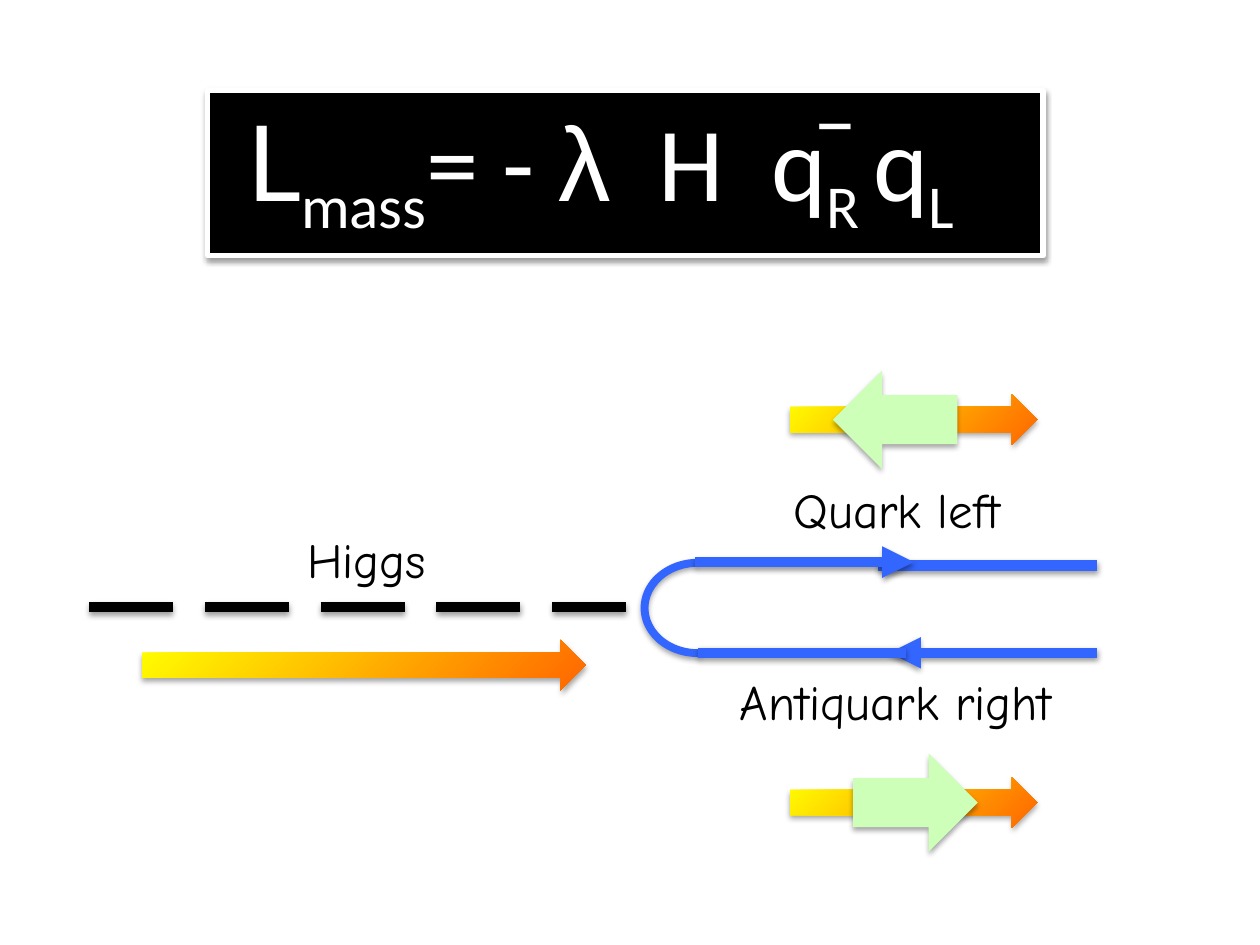
from typing import NamedTuple, Optional

from lxml import etree
from pptx import Presentation
from pptx.dml.color import RGBColor
from pptx.enum.dml import MSO_LINE
from pptx.enum.shapes import MSO_CONNECTOR, MSO_SHAPE
from pptx.enum.text import MSO_ANCHOR, MSO_AUTO_SIZE, PP_ALIGN
from pptx.oxml.ns import qn
from pptx.util import Cm, Pt

STRAIGHT = MSO_CONNECTOR.STRAIGHT
RECTANGLE = MSO_SHAPE.RECTANGLE
BLOCK_ARC = MSO_SHAPE.BLOCK_ARC
RIGHT_ARROW = MSO_SHAPE.RIGHT_ARROW
LONG_DASH = MSO_LINE.LONG_DASH
FIT_SHAPE = MSO_AUTO_SIZE.SHAPE_TO_FIT_TEXT
TOP = MSO_ANCHOR.TOP
LEFT = PP_ALIGN.LEFT

COLORS = {
    "black": "000000",
    "white": "FFFFFF",
    "quark": "3366FF",
    "orange": "FF6600",
    "yellow": "FFFF00",
    "spin": "CDFFB8",
}
LINE_SHADOW_DISTANCE = 20000
SHAPE_SHADOW_DISTANCE = 23000


class Box(NamedTuple):
    """A frame in centimetres."""
    left: float
    top: float
    width: float
    height: float


class Label(NamedTuple):
    text: str
    box: Box
    font: str = "Comic Neue"
    size: int = 28
    color: str = "black"


class Line(NamedTuple):
    """A horizontal line; its arrowhead sits at the start."""
    start: float
    end: float
    y: float
    color: str = "quark"
    dash: Optional[MSO_LINE] = None
    arrowhead: bool = False


class Term(NamedTuple):
    """A part of the formula."""
    text: str
    font: str = "Calibri"
    subscript: bool = False


FORMULA_BOX = Box(4.19, 1.83, 16.84, 3.33)
FORMULA = [
    Term(" L", "Lato"),
    Term("mass", subscript=True),
    Term("= - "),
    Term("λ", "Arial"),
    Term("  H  q"),
    Term("R ", subscript=True),
    Term("q"),
    Term("L", subscript=True),
]
ANTIQUARK_BAR = Label("−", Box(16.18, 1.27, 1.37, 2.31), "Calibri", 48, "white")

HIGGS_LINE = Line(1.8, 12.62, 12.24, "black", LONG_DASH)
TURN = Box(13.08, 11.1, 1.98, 2.31)
QUARK_LINES = [
    Line(17.93, 22.12, 13.16, arrowhead=True),
    Line(17.7, 22.12, 11.4),
    Line(14.07, 18.26, 13.16),
    Line(18.42, 14.02, 11.33, arrowhead=True),
]
LABELS = [
    Label("Quark left", Box(15.75, 9.55, 5.54, 1.45)),
    Label("Antiquark right", Box(14.66, 13.41, 7.72, 1.45)),
    Label("Higgs", Box(5.94, 10.54, 2.92, 1.3)),
]
MOMENTUM_ARROWS = [
    Box(15.93, 15.67, 4.98, 1.02),
    Box(2.87, 12.9, 8.94, 1.02),
    Box(15.93, 7.95, 4.98, 1.02),
]
SPIN_ARROWS = [(Box(17.2, 15.19, 2.51, 1.98), 0), (Box(16.79, 7.47, 2.51, 1.98), 180)]


def rgb(name: str) -> RGBColor:
    return RGBColor.from_string(COLORS[name])


def add_shadow(shape, distance: int, opacity: int) -> None:
    """Give a shape or connector a soft shadow straight below it."""
    effects = etree.SubElement(shape._element.spPr, qn("a:effectLst"))
    shadow = etree.SubElement(effects, qn("a:outerShdw"), blurRad="40000",
                              dist=str(distance), dir="5400000", rotWithShape="0")
    color = etree.SubElement(shadow, qn("a:srgbClr"), val=COLORS["black"])
    etree.SubElement(color, qn("a:alpha"), val=str(opacity * 1000))


def add_shape(shapes, kind: MSO_SHAPE, box: Box, color: Optional[str] = None,
              rotation: float = 0):
    """Add a shadowed, unoutlined shape; without a colour it gets the gradient."""
    shape = shapes.add_shape(kind, *map(Cm, box))
    shape.rotation = rotation
    shape.line.fill.background()
    if color:
        shape.fill.solid()
        shape.fill.fore_color.rgb = rgb(color)
    else:
        fill_with_gradient(shape)
    add_shadow(shape, SHAPE_SHADOW_DISTANCE, 35)
    return shape


def fill_with_gradient(shape) -> None:
    """Spread orange from the bottom right corner out to yellow."""
    shape.fill.gradient()
    for stop, color in zip(shape.fill.gradient_stops, ("orange", "yellow")):
        stop.color.rgb = rgb(color)
    gradient = shape._element.spPr.find(qn("a:gradFill"))
    gradient.remove(gradient.find(qn("a:lin")))
    circle = etree.SubElement(gradient, qn("a:path"), path="circle")
    etree.SubElement(circle, qn("a:fillToRect"), l="100000", t="100000")


def add_line(shapes, line: Line) -> None:
    connector = shapes.add_connector(STRAIGHT, Cm(line.start), Cm(line.y),
                                     Cm(line.end), Cm(line.y))
    connector.line.width = Pt(6)
    connector.line.color.rgb = rgb(line.color)
    if line.dash:
        connector.line.dash_style = line.dash
    if line.arrowhead:
        etree.SubElement(connector.line._get_or_add_ln(), qn("a:headEnd"), type="triangle")
    add_shadow(connector, LINE_SHADOW_DISTANCE, 38)


def add_label(shapes, label: Label) -> None:
    frame = shapes.add_textbox(*map(Cm, label.box)).text_frame
    frame.word_wrap = False
    frame.auto_size = FIT_SHAPE
    paragraph = frame.paragraphs[0]
    paragraph.text = label.text
    paragraph.font.name = label.font
    paragraph.font.size = Pt(label.size)
    paragraph.font.color.rgb = rgb(label.color)


def add_formula(shapes) -> None:
    shape = shapes.add_shape(RECTANGLE, *map(Cm, FORMULA_BOX))
    shape.fill.solid()
    shape.fill.fore_color.rgb = rgb("black")
    shape.line.color.rgb = rgb("white")
    shape.line.width = Pt(3)
    add_shadow(shape, LINE_SHADOW_DISTANCE, 38)

    frame = shape.text_frame
    frame.word_wrap = True
    frame.auto_size = FIT_SHAPE
    frame.vertical_anchor = TOP
    paragraph = frame.paragraphs[0]
    paragraph.alignment = LEFT
    for term in FORMULA:
        run = paragraph.add_run()
        run.text = term.text
        run.font.name = term.font
        run.font.size = Pt(60)
        run.font.color.rgb = rgb("white")
        if term.subscript:
            run.font._element.set("baseline", "-25000")


def main() -> None:
    presentation = Presentation()
    presentation.slide_width, presentation.slide_height = Cm(25.4), Cm(19.05)
    slide = presentation.slides.add_slide(presentation.slide_layouts[6])
    shapes = slide.shapes

    # Mass term with the bar over the first q
    formula_group = shapes.add_group_shape()
    add_formula(formula_group.shapes)
    add_label(formula_group.shapes, ANTIQUARK_BAR)

    # Higgs line meeting the quark line at its turn
    add_line(shapes, HIGGS_LINE)
    turn = add_shape(shapes, BLOCK_ARC, TURN, "quark", 270)
    for index, value in enumerate((106.85, 214.28, 0.08)):
        turn.adjustments[index] = value
    for line in QUARK_LINES:
        add_line(shapes, line)
    for label in LABELS:
        add_label(shapes, label)

    # Momentum arrows, with spin arrows on top
    for box in MOMENTUM_ARROWS:
        add_shape(shapes, RIGHT_ARROW, box)
    for box, rotation in SPIN_ARROWS:
        add_shape(shapes, RIGHT_ARROW, box, "spin", rotation)

    presentation.save("out.pptx")


if __name__ == "__main__":
    main()
